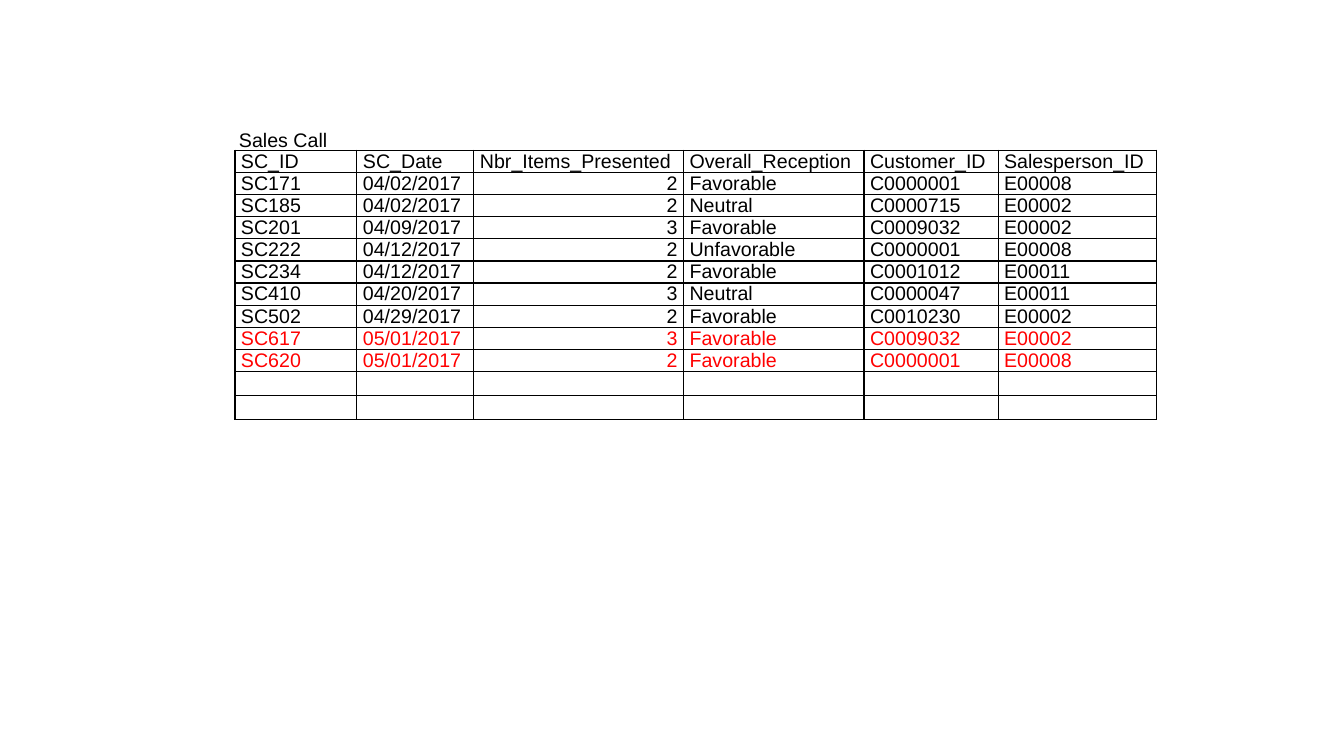
from lxml.etree import SubElement
from pptx import Presentation
from pptx.dml.color import RGBColor
from pptx.enum.text import PP_ALIGN
from pptx.oxml.ns import qn
from pptx.util import Inches, Pt

COLORS = {"text": "000000", "new": "FF0000", "border": "000000"}
FONT = "Arial"
SIZE = Pt(14)
COLUMN_WIDTHS = [1.21, 1.16, 2.08, 1.79, 1.33, 1.57]
ROW_HEIGHT = 0.22
COUNT_COLUMN = 2
NEW_CALLS = {"SC617", "SC620"}
EMPTY_ROW = [""] * len(COLUMN_WIDTHS)

SALES_CALLS = [
    ["SC_ID", "SC_Date", "Nbr_Items_Presented", "Overall_Reception", "Customer_ID", "Salesperson_ID"],
    ["SC171", "04/02/2017", "2", "Favorable", "C0000001", "E00008"],
    ["SC185", "04/02/2017", "2", "Neutral", "C0000715", "E00002"],
    ["SC201", "04/09/2017", "3", "Favorable", "C0009032", "E00002"],
    ["SC222", "04/12/2017", "2", "Unfavorable", "C0000001", "E00008"],
    ["SC234", "04/12/2017", "2", "Favorable", "C0001012", "E00011"],
    ["SC410", "04/20/2017", "3", "Neutral", "C0000047", "E00011"],
    ["SC502", "04/29/2017", "2", "Favorable", "C0010230", "E00002"],
    ["SC617", "05/01/2017", "3", "Favorable", "C0009032", "E00002"],
    ["SC620", "05/01/2017", "2", "Favorable", "C0000001", "E00008"],
    EMPTY_ROW,
    EMPTY_ROW,
]


def write_text(p, text, color):
    p.text = text
    for r in p.runs:
        r.font.name = FONT
        r.font.size = SIZE
        r.font.color.rgb = RGBColor.from_string(color)
    if not text:
        SubElement(p._p, qn("a:endParaRPr"), sz=str(int(SIZE.pt * 100)))


def set_borders(cell):
    tc_pr = cell._tc.get_or_add_tcPr()
    for side in ("lnL", "lnR", "lnT", "lnB"):
        ln = SubElement(tc_pr, qn(f"a:{side}"), w=str(Pt(1)))
        fill = SubElement(ln, qn("a:solidFill"))
        SubElement(fill, qn("a:srgbClr"), val=COLORS["border"])


def format_cell(cell):
    cell.margin_left = cell.margin_right = Inches(0.06)
    cell.margin_top = cell.margin_bottom = 0
    set_borders(cell)
    cell.fill.background()


def add_caption(s, text, left, top, width, height):
    box = s.shapes.add_textbox(Inches(left), Inches(top), Inches(width), Inches(height))
    tf = box.text_frame
    tf.word_wrap = True
    tf.margin_left = tf.margin_right = Inches(0.07)
    tf.margin_top = tf.margin_bottom = Inches(0.04)
    write_text(tf.paragraphs[0], text, COLORS["text"])


def add_sales_calls(s, left, top):
    frame = s.shapes.add_table(
        len(SALES_CALLS), len(COLUMN_WIDTHS), Inches(left), Inches(top),
        Inches(sum(COLUMN_WIDTHS)), Inches(ROW_HEIGHT * len(SALES_CALLS)))
    table = frame.table
    table.first_row = table.horz_banding = False
    for column, width in zip(table.columns, COLUMN_WIDTHS):
        column.width = Inches(width)
    for i, values in enumerate(SALES_CALLS):
        table.rows[i].height = Inches(ROW_HEIGHT)
        color = COLORS["new" if values[0] in NEW_CALLS else "text"]
        for j, value in enumerate(values):
            cell = table.cell(i, j)
            format_cell(cell)
            p = cell.text_frame.paragraphs[0]
            write_text(p, value, color)
            if j == COUNT_COLUMN and value.isdigit():
                p.alignment = PP_ALIGN.RIGHT


def main():
    prs = Presentation()
    prs.slide_width = Inches(13.33)
    prs.slide_height = Inches(7.5)
    s = prs.slides.add_slide(prs.slide_layouts[6])
    add_sales_calls(s, 2.33, 1.49)
    add_caption(s, "Sales Call", 2.3, 1.23, 2.32, 0.55)
    prs.save("out.pptx")


if __name__ == "__main__":
    main()
